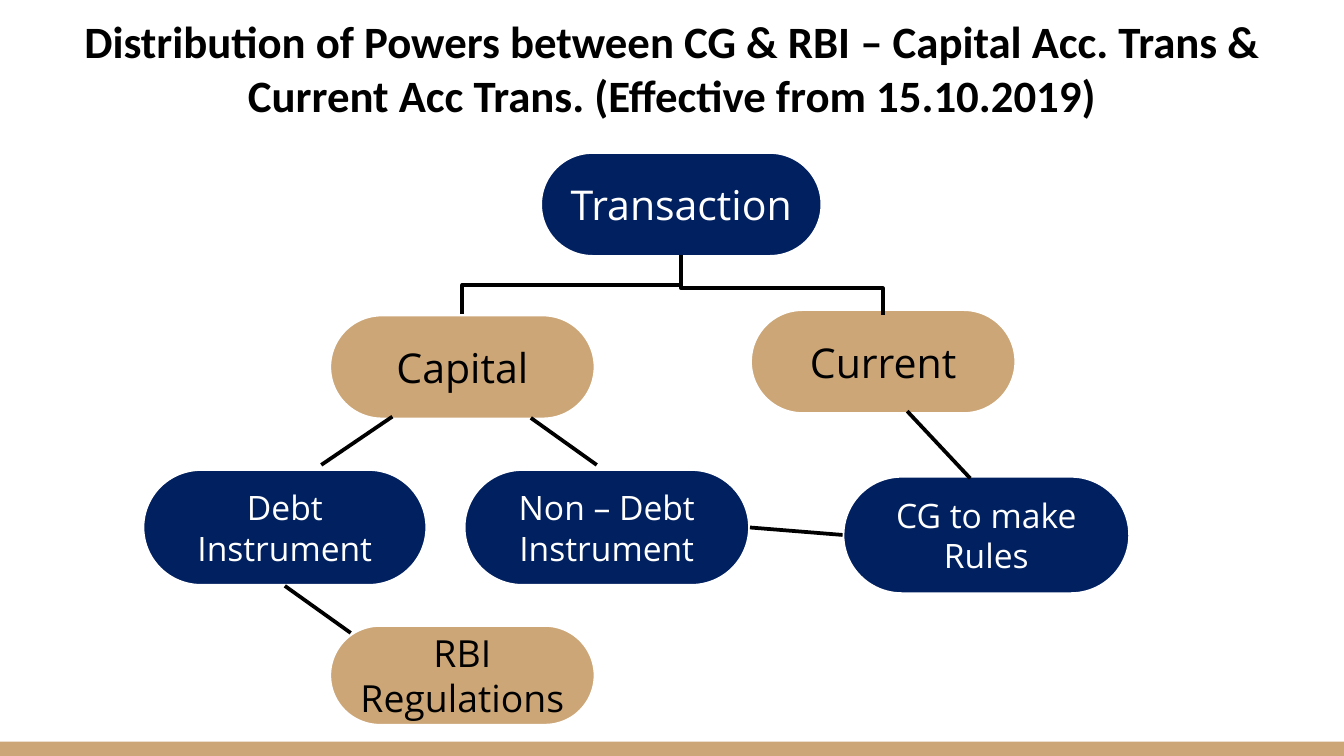
from dataclasses import dataclass

from lxml import etree
from pptx import Presentation
from pptx.dml.color import RGBColor
from pptx.enum.shapes import MSO_CONNECTOR, MSO_SHAPE
from pptx.enum.text import MSO_ANCHOR, PP_ALIGN
from pptx.oxml.ns import qn
from pptx.util import Pt

RECT, ROUNDED = MSO_SHAPE.RECTANGLE, MSO_SHAPE.ROUNDED_RECTANGLE
STRAIGHT, ELBOW = MSO_CONNECTOR.STRAIGHT, MSO_CONNECTOR.ELBOW
MIDDLE, TOP = MSO_ANCHOR.MIDDLE, MSO_ANCHOR.TOP
CENTER = PP_ALIGN.CENTER
LEFT_SIDE, BOTTOM_SIDE, RIGHT_SIDE = 1, 2, 3


@dataclass(frozen=True)
class Theme:
    navy: RGBColor = RGBColor(0x00, 0x20, 0x60)
    tan: RGBColor = RGBColor(0xCC, 0xA6, 0x77)
    white: RGBColor = RGBColor(0xFF, 0xFF, 0xFF)
    black: RGBColor = RGBColor(0x00, 0x00, 0x00)
    title_font: str = "Calibri"
    body_font: str = "Open Sans"
    title: int = 24
    large: int = 22
    medium: int = 20
    small: int = 18
    line: int = 2


theme = Theme()


def write(sp, text, anchor, color, **font):
    tf = sp.text_frame
    frame = {"word_wrap": True, "vertical_anchor": anchor}
    frame.update({f"margin_{side}": Pt(7.2) for side in ("left", "top", "right", "bottom")})
    for name, value in frame.items():
        setattr(tf, name, value)
    p = tf.paragraphs[0]
    p.alignment = CENTER
    r = p.add_run()
    r.text = text
    for name, value in font.items():
        setattr(r.font, name, value)
    r.font.color.rgb = color


def connect(kind, x1, y1, x2, y2):
    c = s.shapes.add_connector(kind, Pt(x1), Pt(y1), Pt(x2), Pt(y2))
    c.line.color.rgb = theme.black
    c.line.width = Pt(theme.line)
    etree.SubElement(c._element.spPr, qn("a:effectLst"))
    return c


prs = Presentation()
prs.slide_width, prs.slide_height = Pt(720), Pt(405)
s = prs.slides.add_slide(prs.slide_layouts[6])

# Footer bar and title
bar = s.shapes.add_shape(RECT, Pt(0), Pt(397.4), Pt(720), Pt(7.6))
bar.shadow.inherit = False
bar.fill.solid()
bar.fill.fore_color.rgb = theme.tan
bar.line.fill.background()

title = s.shapes.add_textbox(Pt(24.5), Pt(0), Pt(671), Pt(65.5))
write(title, "Distribution of Powers between CG & RBI – Capital Acc. Trans & "
      "Current Acc Trans. (Effective from 15.10.2019)", TOP, theme.black,
      name=theme.title_font, size=Pt(theme.title), bold=True)

# Boxes: text, left, top, width, height, fill, text colour, type size
navy, tan = (theme.navy, theme.white), (theme.tan, theme.black)
nodes = [
    ("Transaction", 289.4, 81.4, 151.2, 56.2, *navy, theme.large),
    ("Current", 401.8, 165.6, 142.6, 56.2, *tan, theme.large),
    ("Capital", 176.4, 168.5, 142.6, 56.2, *tan, theme.large),
    ("Debt Instrument", 76.3, 251.3, 152.6, 62.6, *navy, theme.small),
    ("Non – Debt Instrument", 248.4, 251.3, 153.4, 62.6, *navy, theme.small),
    ("CG to make Rules", 451.4, 254.9, 154.1, 63.4, *navy, theme.small),
    ("RBI Regulations", 176.4, 334.8, 142.6, 54, *tan, theme.medium),
]
boxes = {}
for text, x, y, w, h, fill, color, size in nodes:
    sp = s.shapes.add_shape(ROUNDED, Pt(x), Pt(y), Pt(w), Pt(h))
    sp.adjustments[0] = 0.5
    sp.shadow.inherit = False
    sp.fill.solid()
    sp.fill.fore_color.rgb = fill
    sp.line.color.rgb = theme.white
    sp.line.width = Pt(theme.line)
    write(sp, text, MIDDLE, color, name=theme.body_font, size=Pt(size))
    boxes[text] = sp

# Elbows leave downwards: lay each out sideways about its centre, then turn it 90°
for x1, y1, x2, y2 in [(365, 140.4, 473, 168.5), (365, 136.8, 247.7, 168.5)]:
    cx, cy = (x1 + x2) / 2, (y1 + y2) / 2
    dx, dy = (x2 - x1) / 2, (y2 - y1) / 2
    c = connect(ELBOW, cx - dy, cy + dx, cx + dy, cy - dx)
    c._element.spPr.find(qn("a:xfrm")).set("rot", "5400000")

for ends in [
    (486, 220.3, 519.8, 256.3),    # Current to CG
    (284.4, 223.9, 319.7, 249.1),  # Capital to Non – Debt
    (210.2, 223.2, 172.1, 249.1),  # Capital to Debt
]:
    connect(STRAIGHT, *ends)

rules_link = connect(STRAIGHT, 401.8, 282.6, 451.4, 286.6)
rules_link.begin_connect(boxes["Non – Debt Instrument"], RIGHT_SIDE)
rules_link.end_connect(boxes["CG to make Rules"], LEFT_SIDE)

regulations_link = connect(STRAIGHT, 152.6, 313.9, 187.9, 339.1)
regulations_link.begin_connect(boxes["Debt Instrument"], BOTTOM_SIDE)

prs.save("out.pptx")
